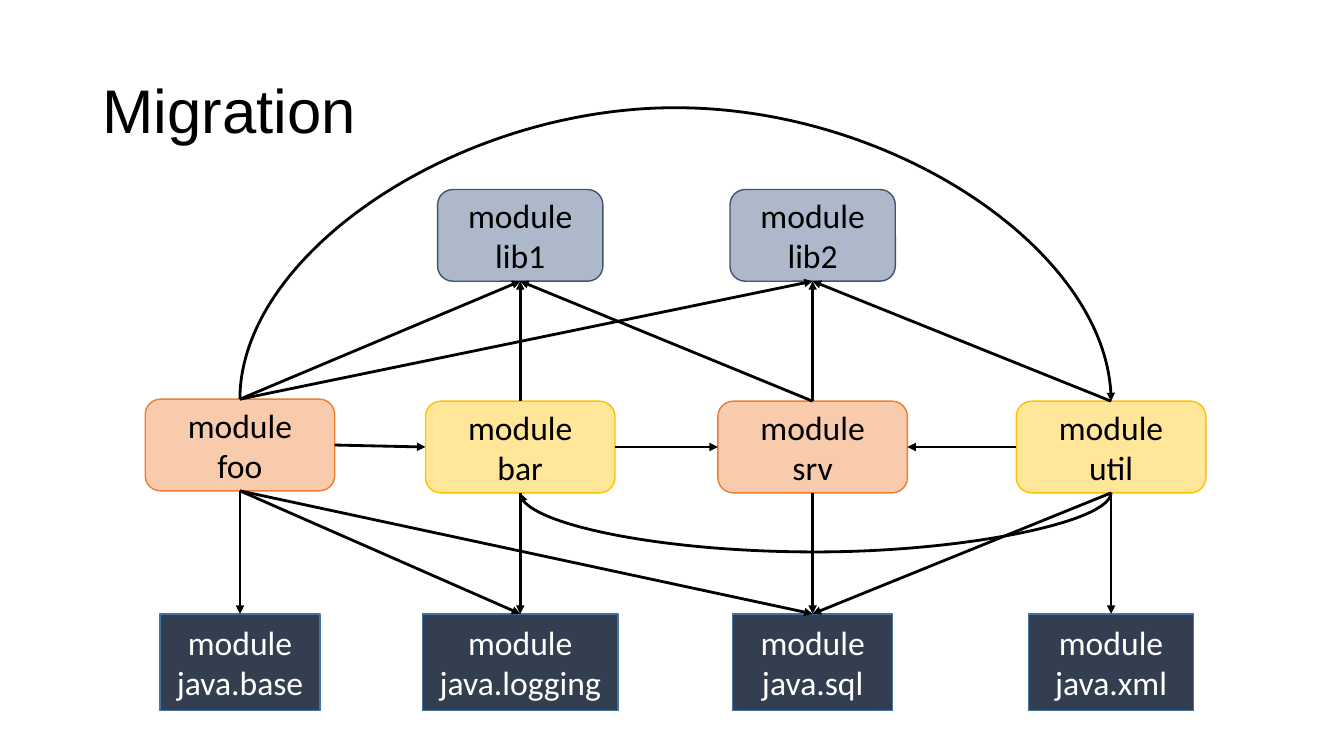
from pptx import Presentation
from pptx.dml.color import RGBColor
from pptx.enum.shapes import MSO_CONNECTOR as Link, MSO_SHAPE as Shape
from pptx.enum.text import MSO_ANCHOR as Anchor, PP_ALIGN as Align
from pptx.oxml.ns import qn
from pptx.oxml.xmlchemy import OxmlElement
from pptx.util import Inches, Pt

TOP, LEFT, BOTTOM, RIGHT = range(4)
CENTERS = [2.38, 5.16, 8.06, 11.02]
PLATFORM = {"kind": Shape.RECTANGLE, "fill": "333F50", "line": "43739E", "ink": "FFFFFF", "gap": "\v"}
ROUNDED = {"kind": Shape.ROUNDED_RECTANGLE, "ink": "000000", "gap": "\n"}
LIBRARY = {**ROUNDED, "fill": "ADB9CA", "line": "44546A"}
ORANGE = {**ROUNDED, "fill": "F8CBAD", "line": "ED7D31"}
YELLOW = {**ROUNDED, "fill": "FFE699", "line": "FFC000"}

MODULES = [
    ("java.base", 0, 6.09, 1.59, 0.96, PLATFORM),
    ("java.logging", 1, 6.09, 1.94, 0.96, PLATFORM),
    ("java.sql", 2, 6.09, 1.59, 0.96, PLATFORM),
    ("java.xml", 3, 6.09, 1.64, 0.96, PLATFORM),
    ("lib1", 1, 1.88, 1.64, 0.91, LIBRARY),
    ("lib2", 2, 1.88, 1.64, 0.91, LIBRARY),
    ("foo", 0, 3.96, 1.88, 0.91, ORANGE),
    ("util", 3, 3.98, 1.88, 0.91, YELLOW),
    ("bar", 1, 3.98, 1.88, 0.91, YELLOW),
    ("srv", 2, 3.98, 1.88, 0.91, ORANGE),
]
DEPENDENCIES = [
    (BOTTOM, TOP, {"foo": ["java.base", "java.logging", "java.sql"], "bar": ["java.logging"],
                   "srv": ["java.sql"], "util": ["java.sql", "java.xml"]}),
    (TOP, BOTTOM, {"bar": ["lib1"], "srv": ["lib1", "lib2"], "foo": ["lib2", "lib1"],
                   "util": ["lib2"]}),
    (RIGHT, LEFT, {"foo": ["bar"], "bar": ["srv"]}),
    (LEFT, RIGHT, {"util": ["srv"]}),
]


def color(value):
    return RGBColor.from_string(value)


def set_format(target, values):
    for name, value in values.items():
        setattr(target, name, value)


def write(frame, text, font, size, ink, **layout):
    set_format(frame, {"word_wrap": True, "vertical_anchor": Anchor.MIDDLE})
    frame.text = text
    for para in frame.paragraphs:
        set_format(para, layout)
        for span in para.runs:
            set_format(span.font, {"name": font, "size": Pt(size)})
            span.font.color.rgb = color(ink)


def add_title(page, text):
    box = page.shapes.add_textbox(Inches(0.92), Inches(0.4), Inches(11.5), Inches(1.45))
    write(box.text_frame, text, "Arial", 44, "000000", line_spacing=0.9)


def add_module(page, name, column, top, width, height, style):
    left = CENTERS[column] - width / 2
    box = page.shapes.add_shape(style["kind"], Inches(left), Inches(top), Inches(width), Inches(height))
    box.shadow.inherit = False
    box.fill.solid()
    box.fill.fore_color.rgb = color(style["fill"])
    box.line.color.rgb = color(style["line"])
    box.line.width = Pt(1)
    write(box.text_frame, f"module{style['gap']}{name}", "Calibri", 24, style["ink"],
          alignment=Align.CENTER)
    return box


def add_arrow(page, source, target, source_side, target_side, kind=Link.STRAIGHT):
    arrow = page.shapes.add_connector(kind, 0, 0, 0, 0)
    arrow.begin_connect(source, source_side)
    arrow.end_connect(target, target_side)
    arrow.line.color.rgb = color("000000")
    arrow.line.width = Pt(2)
    head = OxmlElement("a:tailEnd")
    head.set("type", "triangle")
    arrow.line._get_or_add_ln().append(head)
    arrow._element.spPr.append(OxmlElement("a:effectLst"))
    return arrow


def add_arc(page, source, target, side, bulge, drop, turn, flip):
    arc = add_arrow(page, source, target, side, side, Link.CURVE)
    reach = abs(arc.end_x - arc.begin_x)
    middle_x = (arc.begin_x + arc.end_x) // 2
    middle_y = (arc.begin_y + arc.end_y) // 2
    depth = Inches(drop)
    frame = arc._element.spPr.find(qn("a:xfrm"))
    for name, value in {"rot": turn * 60000, "flipH": flip, "flipV": 0}.items():
        frame.set(name, str(value))
    set_format(arc, {"left": middle_x - depth // 2, "top": middle_y - reach // 2,
                     "width": depth, "height": reach})
    guide = OxmlElement("a:gd")
    guide.set("name", "adj1")
    guide.set("fmla", f"val {round(bulge / drop * 100000)}")
    arc._element.spPr.find(qn("a:prstGeom")).get_or_add_avLst().append(guide)


def main():
    deck = Presentation()
    set_format(deck, {"slide_width": Inches(13.33), "slide_height": Inches(7.5)})
    page = deck.slides.add_slide(deck.slide_layouts[6])
    add_title(page, "Migration")
    boxes = {module[0]: add_module(page, *module) for module in MODULES}
    for source_side, target_side, links in DEPENDENCIES:
        for source, targets in links.items():
            for target in targets:
                add_arrow(page, boxes[source], boxes[target], source_side, target_side)
    add_arc(page, boxes["foo"], boxes["util"], TOP, -2.88, 0.02, 270, 1)
    add_arc(page, boxes["util"], boxes["bar"], BOTTOM, 0.6, 0.01, 90, 0)
    deck.save("out.pptx")


if __name__ == "__main__":
    main()
